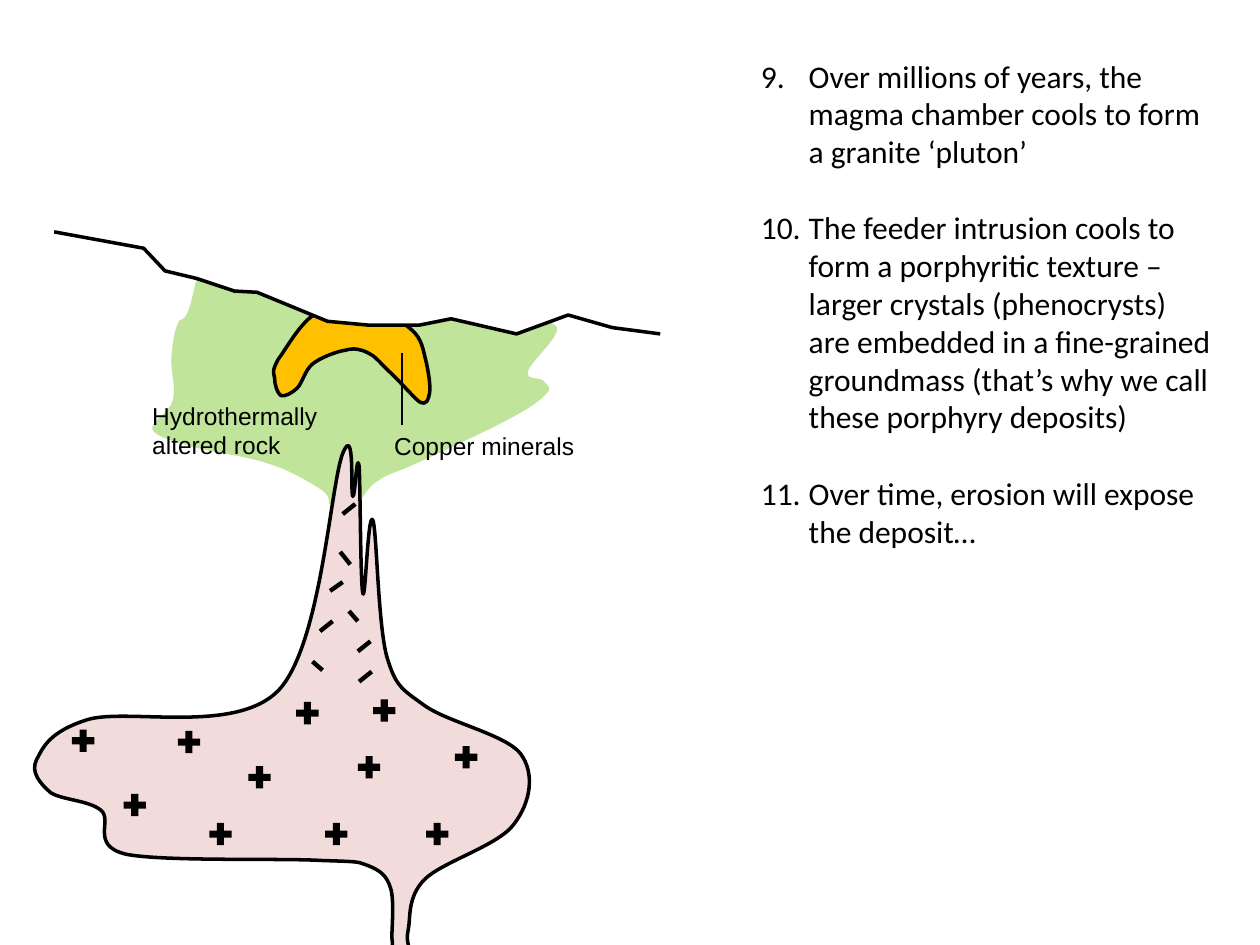
"""Build a slide on how a porphyry copper deposit cools and is exposed."""
from lxml import etree
from pptx import Presentation
from pptx import util as u
from pptx.dml.color import RGBColor
from pptx.enum import shapes, text
from pptx.oxml.ns import qn

PX = 9144
COLORS = {"ink": "000000", "sky": "FFFFFF", "altered": "92D050",
          "copper": "FFC000", "granite": "F2DCDB"}

SURFACE = [(43, 184), (114, 197), (131, 215), (156, 221), (186, 231), (204, 232),
           (260, 255), (292, 258), (333, 258), (358, 253), (410, 265), (451, 250),
           (486, 260), (524, 265)]
SKY_CORNERS = [(532, 265), (532, 84), (40, 84), (40, 184)]

ALTERED_ROCK = (261, 400), [
    (261, 397, 262, 393, 254, 388), (246, 383, 230, 373, 213, 368),
    (196, 362, 169, 359, 154, 355), (138, 350, 124, 347, 121, 341),
    (119, 335, 135, 327, 137, 318), (140, 308, 135, 293, 136, 283),
    (137, 273, 138, 264, 141, 257), (143, 251, 146, 257, 150, 245),
    (154, 234, 159, 200, 167, 187), (174, 174, 188, 169, 196, 168),
    (205, 166, 210, 181, 219, 176), (227, 171, 235, 135, 244, 138),
    (254, 141, 262, 195, 275, 196), (288, 197, 309, 142, 321, 144),
    (334, 147, 340, 203, 350, 214), (360, 225, 374, 206, 383, 208),
    (393, 210, 405, 219, 408, 225), (411, 231, 396, 241, 402, 247),
    (407, 253, 439, 252, 442, 260), (444, 268, 420, 288, 419, 295),
    (417, 302, 428, 299, 431, 302), (433, 305, 439, 307, 434, 312),
    (430, 317, 422, 323, 405, 332), (387, 342, 347, 360, 330, 368),
    (312, 376, 308, 376, 301, 381), (294, 385, 290, 391, 287, 396)]

COPPER_ORE = (221, 285), [
    (227, 277, 238, 257, 249, 250), (260, 243, 277, 240, 290, 242),
    (303, 244, 319, 255, 327, 262), (335, 269, 336, 278, 338, 286),
    (340, 294, 342, 307, 341, 312), (340, 317, 339, 322, 333, 319),
    (328, 315, 315, 300, 308, 294), (301, 287, 297, 282, 292, 280),
    (286, 277, 281, 276, 274, 278), (267, 279, 254, 284, 248, 289),
    (242, 294, 240, 304, 236, 308), (232, 312, 226, 315, 223, 314),
    (220, 312, 218, 305, 218, 300), (217, 295, 216, 294, 221, 285)]

PLUTON = (256, 683), [
    (224, 681, 130, 684, 100, 678), (71, 671, 90, 651, 80, 643),
    (70, 635, 49, 635, 40, 629), (32, 622, 24, 613, 29, 603),
    (34, 594, 38, 581, 70, 571), (102, 562, 187, 583, 221, 548),
    (255, 512, 262, 386, 272, 360), (282, 335, 278, 392, 280, 394),
    (282, 395, 283, 357, 285, 370), (286, 383, 286, 464, 288, 471),
    (290, 479, 292, 404, 296, 413), (299, 421, 300, 496, 307, 521),
    (314, 545, 319, 547, 337, 560), (355, 573, 401, 583, 413, 598),
    (425, 614, 421, 637, 408, 654), (396, 671, 351, 684, 337, 698),
    (323, 712, 326, 729, 324, 738), (322, 747, 325, 750, 324, 752),
    (320, 752, 316, 752, 311, 752), (311, 750, 312, 752, 311, 744),
    (311, 737, 313, 714, 310, 705), (307, 695, 302, 691, 292, 687),
    (283, 684, 288, 684, 256, 683)]

CRYSTAL_SIZE = 24
CRYSTALS = [(54, 576), (95, 627), (138, 577), (163, 650), (232, 554), (194, 605),
            (255, 650), (281, 597), (358, 589), (335, 650), (293, 552)]
PHENOCRYSTS = [(248, 525, 256, 532), (272, 462, 262, 469), (277, 485, 284, 493),
               (264, 493, 254, 501), (294, 509, 284, 517), (270, 438, 278, 448),
               (295, 533, 285, 541), (282, 400, 272, 408)]

STEPS = [
    "Over millions of years, the magma chamber cools to form a granite ‘pluton’",
    "The feeder intrusion cools to form a porphyritic texture –larger crystals "
    "(phenocrysts) are embedded in a fine-grained groundmass (that’s why we call "
    "these porphyry deposits)",
    "Over time, erosion will expose the deposit…"]


def rgb(name):
    """Return the colour stored under a name."""
    return RGBColor.from_string(COLORS[name])


def paint(shape, fill=None, outlined=False):
    """Set a shape's fill and outline and drop its shadow."""
    shape.shadow.inherit = False
    if fill:
        shape.fill.solid()
        shape.fill.fore_color.rgb = rgb(fill)
    else:
        shape.fill.background()
    if outlined:
        shape.line.color.rgb = rgb("ink")
        shape.line.width = u.Pt(2)
    else:
        shape.line.fill.background()


def add_outline(slide, points, close=True, **style):
    """Add a painted outline through the points."""
    builder = slide.shapes.build_freeform(*points[0], scale=PX)
    builder.add_line_segments(points[1:], close=close)
    outline = builder.convert_to_shape()
    paint(outline, **style)
    return outline


def add_body(slide, start, curves, **style):
    """Add a rounded body whose sides are cubic curves."""
    points = [start] + [c[i:i + 2] for c in curves for i in (0, 2, 4)]
    body = add_outline(slide, points, **style)
    steps = list(body._element.iter(qn("a:lnTo")))
    for first in range(0, len(steps), 3):
        curve = etree.Element(qn("a:cubicBezTo"))
        steps[first].addprevious(curve)
        for step in steps[first:first + 3]:
            curve.append(step[0])
            step.getparent().remove(step)
    return body


def add_stroke(slide, ends, width):
    """Add a straight black line."""
    stroke = slide.shapes.add_connector(shapes.MSO_CONNECTOR.STRAIGHT,
                                        *(v * PX for v in ends))
    stroke.line.color.rgb = rgb("ink")
    stroke.line.width = u.Pt(width)
    etree.SubElement(stroke._element.spPr, qn("a:effectLst"))


def add_words(slide, box, lines, font, size):
    """Add a wrapping text box and return its paragraphs."""
    frame = slide.shapes.add_textbox(*(v * PX for v in box)).text_frame
    frame.word_wrap = True
    frame.auto_size = text.MSO_AUTO_SIZE.SHAPE_TO_FIT_TEXT
    frame.text = "\n".join(lines)
    for paragraph in frame.paragraphs:
        for run in paragraph.runs:
            run.font.name = font
            run.font.size = u.Pt(size)
            run.font.color.rgb = rgb("ink")
    return frame.paragraphs


def number_steps(paragraphs, start, indent):
    """Number the paragraphs with a hanging indent and a gap between them."""
    for paragraph in paragraphs:
        props = paragraph._p.get_or_add_pPr()
        props.set("marL", str(indent * PX))
        props.set("indent", str(-indent * PX))
        if paragraph is not paragraphs[-1]:
            paragraph.space_after = u.Pt(22)
        etree.SubElement(props, qn("a:buFont"), typeface="+mj-lt")
        etree.SubElement(props, qn("a:buAutoNum"), type="arabicPeriod",
                         startAt=str(start))


def main():
    """Draw the cross-section and its numbered steps."""
    deck = Presentation()
    deck.slide_width, deck.slide_height = 1000 * PX, 750 * PX
    slide = deck.slides.add_slide(deck.slide_layouts[6])

    altered = add_body(slide, *ALTERED_ROCK, fill="altered")
    tint = altered._element.spPr.find(qn("a:solidFill"))[0]
    etree.SubElement(tint, qn("a:alpha"), val="57000")
    add_body(slide, *COPPER_ORE, fill="copper", outlined=True)
    add_words(slide, (111, 313, 386, 57), ["Hydrothermally", "altered rock"],
              "Arial", 14)
    add_words(slide, (303, 337, 386, 34), ["Copper minerals"], "Arial", 14)
    add_stroke(slide, (319, 280, 319, 337), 0.75)

    add_body(slide, *PLUTON, fill="granite", outlined=True)
    for left, top in CRYSTALS:
        crystal = slide.shapes.add_shape(
            shapes.MSO_SHAPE.MATH_PLUS,
            *(v * PX for v in (left, top, CRYSTAL_SIZE, CRYSTAL_SIZE)))
        paint(crystal, fill="ink")
    for ends in PHENOCRYSTS:
        add_stroke(slide, ends, 2.5)

    steps = add_words(slide, (594, 40, 378, 404), STEPS, "Calibri", 18)
    number_steps(steps, start=9, indent=38)
    add_outline(slide, SURFACE + SKY_CORNERS, fill="sky")
    add_outline(slide, SURFACE, close=False, outlined=True)
    deck.save("out.pptx")


if __name__ == "__main__":
    main()
